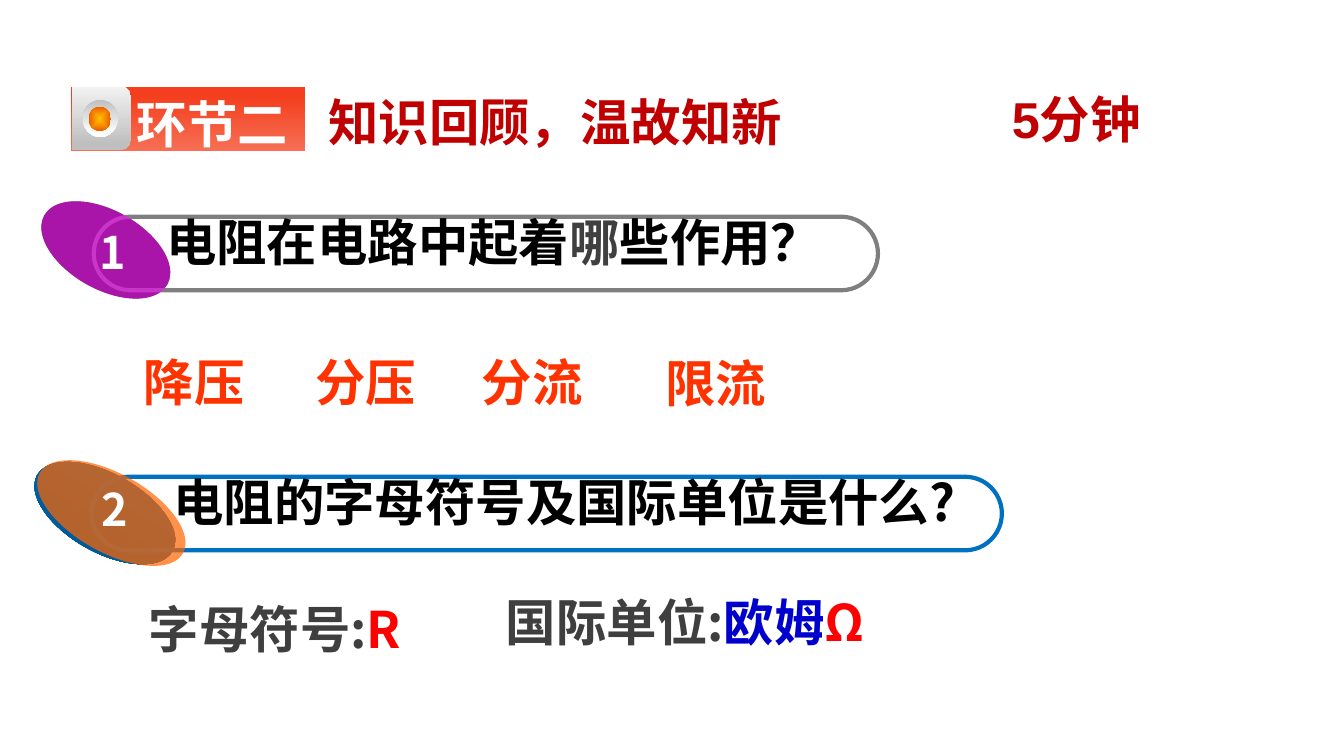
"""Build the review slide: resistor questions with their answers."""
from lxml import etree
from pptx import Presentation
from pptx import util as u
from pptx.dml.color import RGBColor
from pptx.enum import shapes, text
from pptx.oxml.ns import qn

WHITE = RGBColor(0xFF, 0xFF, 0xFF)
BLACK = RGBColor(0, 0, 0)
CHARCOAL = RGBColor(0x33, 0x33, 0x33)
DARK_GREY = RGBColor(0x3F, 0x3F, 0x3F)
GREY = RGBColor(0x7F, 0x7F, 0x7F)
SILVER = RGBColor(0xBF, 0xBF, 0xBF)
PALE = RGBColor(0xF2, 0xF2, 0xF2)
DARK_RED = RGBColor(0xC0, 0, 0)
RED = RGBColor(0xFF, 0, 0)
SCARLET = RGBColor(0xFF, 0x33, 0)
BANNER_RED = RGBColor(0xF3, 0x3F, 0x1E)
BANNER_CORAL = RGBColor(0xF6, 0x6F, 0x54)
GOLD = RGBColor(0xFF, 0xC0, 0)
AMBER = RGBColor(0xEC, 0x5B, 0)
ORANGE = RGBColor(0xFF, 0x66, 0)
MAGENTA = RGBColor(0xFF, 0, 0xFF)
BLUE = RGBColor(0, 0x70, 0xC0)
DEEP_BLUE = RGBColor(0, 0x50, 0x89)
INK_BLUE = RGBColor(0, 0, 0xCC)

CJK_FONT = "Noto Sans CJK SC"
TILT = 29.3
SHAPE = shapes.MSO_SHAPE

BANNER = [
    (SHAPE.RECTANGLE, (111.6, 1.44, 45.36, 167.04), 90,
     dict(stops=[(0.13, BANNER_RED), (1, BANNER_CORAL)], angle=0)),
    (SHAPE.ROUND_2_SAME_RECTANGLE, (49.68, 63.36, 45.36, 42.48), 90,
     dict(stops=[(0.09, SILVER), (1, PALE)], angle=180)),
    (SHAPE.OVAL, (59.04, 71.28, 25.2, 26.64), 0,
     dict(stops=[(0, SILVER), (0.9, WHITE)], angle=90)),
    (SHAPE.OVAL, (63.36, 76.32, 15.84, 17.28), 0,
     dict(stops=[(0, GOLD), (1, AMBER)], radial=True)),
]

QUESTIONS = [
    dict(number="1", number_at=(59.76, 156.96),
         pill=(66.96, 154.8, 560.16, 52.56), line=GREY,
         ball=(25.2, 150.48, 100.8, 56.16), ball_fill=dict(color=CHARCOAL),
         glaze=(25.2, 150.48, 100.8, 56.16), glaze_fill=dict(color=MAGENTA, opacity=58),
         text_at=(111.6, 147.6, 499),
         runs=[("电阻在电路中起着", BLACK), ("哪", DARK_GREY), ("些作用？", BLACK)]),
    dict(number="2", number_at=(61.2, 340.56),
         pill=(65.52, 340.56, 650.16, 52.56), line=BLUE,
         ball=(19.44, 338.4, 110.88, 56.16),
         ball_fill=dict(stops=[(0, BLUE), (1, DEEP_BLUE)], angle=90),
         glaze=(20.88, 338.4, 117.36, 56.16), glaze_fill=dict(color=ORANGE, opacity=71),
         text_at=(116.64, 332.64, 580),
         runs=[("电阻的字母符号及国际单位是什么?", BLACK)]),
]

LABELS = [
    (90.72, 62.64, 164.88, CJK_FONT, [("环节二", WHITE)]),
    (227.52, 61.92, 344, "Arial", [("知识回顾，温故知新", DARK_RED)]),
    (715.68, 59.76, 164.16, "Arial", [("5分钟", DARK_RED)]),
    (95.76, 246.96, 91.44, CJK_FONT, [("降压", SCARLET)]),
    (218.16, 246.96, 130.32, CJK_FONT, [("分压", SCARLET)]),
    (336.96, 246.96, 113.76, CJK_FONT, [("分流", SCARLET)]),
    (468, 247.68, 124.56, CJK_FONT, [("限流", SCARLET)]),
    (99.36, 423.36, 249.84, CJK_FONT, [("字母符号:", DARK_GREY), ("R", RED)]),
    (354.24, 419.04, 351.36, CJK_FONT,
     [("国际单位:", DARK_GREY), ("欧姆", INK_BLUE), ("Ω", RED)]),
]


def paint(shape, color=None, opacity=100, stops=None, angle=0, radial=False):
    fill = shape.fill
    if color is not None:
        fill.solid()
        fill.fore_color.rgb = color
        if opacity < 100:
            swatch = shape._element.spPr.find(".//" + qn("a:srgbClr"))
            etree.SubElement(swatch, qn("a:alpha"), val=str(opacity * 1000))
    elif stops:
        fill.gradient()
        fill.gradient_angle = (360 - angle) % 360
        for stop, (position, stop_color) in zip(fill.gradient_stops, stops):
            stop.position = position
            stop.color.rgb = stop_color
        if radial:
            gradient = shape._element.spPr.find(qn("a:gradFill"))
            gradient.remove(gradient.find(qn("a:lin")))
            focus = etree.SubElement(gradient, qn("a:path"), path="shape")
            etree.SubElement(focus, qn("a:fillToRect"), l="50000", t="50000", r="50000", b="50000")
    else:
        fill.background()


def add_figure(slide, kind, box, rotation=0, line=None, **fill):
    shape = slide.shapes.add_shape(kind, *map(u.Pt, box))
    shape.shadow.inherit = False
    shape.rotation = rotation
    paint(shape, **fill)
    if line is None:
        shape.line.fill.background()
    else:
        shape.line.color.rgb = line
        shape.line.width = u.Pt(3)
    return shape


def add_text(slide, runs, left, top, width, height=50.4, size=36, font=CJK_FONT,
             align=text.PP_ALIGN.LEFT):
    box = slide.shapes.add_textbox(*map(u.Pt, (left, top, width, height)))
    frame = box.text_frame
    frame.word_wrap = True
    frame.auto_size = text.MSO_AUTO_SIZE.SHAPE_TO_FIT_TEXT
    paragraph = frame.paragraphs[0]
    paragraph.alignment = align
    for words, color in runs:
        run = paragraph.add_run()
        run.text = words
        run.font.size = u.Pt(size)
        run.font.bold = True
        run.font.color.rgb = color
        run.font.name = font
        etree.SubElement(run.font._element, qn("a:ea"), typeface=CJK_FONT)


def add_question(slide, question):
    add_figure(slide, SHAPE.OVAL, question["ball"], TILT, **question["ball_fill"])
    pill = add_figure(slide, SHAPE.ROUNDED_RECTANGLE, question["pill"], line=question["line"])
    pill.adjustments[0] = 0.5
    add_figure(slide, SHAPE.OVAL, question["glaze"], TILT, **question["glaze_fill"])
    add_text(slide, [(question["number"], WHITE)], *question["number_at"], 41.04, 45.36,
             size=32, align=text.PP_ALIGN.CENTER)
    add_text(slide, question["runs"], *question["text_at"])


def main():
    presentation = Presentation()
    presentation.slide_width = u.Pt(960)
    presentation.slide_height = u.Pt(540)
    slide = presentation.slides.add_slide(presentation.slide_layouts[6])
    for kind, box, rotation, fill in BANNER:
        add_figure(slide, kind, box, rotation, **fill)
    for question in QUESTIONS:
        add_question(slide, question)
    for left, top, width, font, runs in LABELS:
        add_text(slide, runs, left, top, width, font=font)
    presentation.save("out.pptx")


if __name__ == "__main__":
    main()
